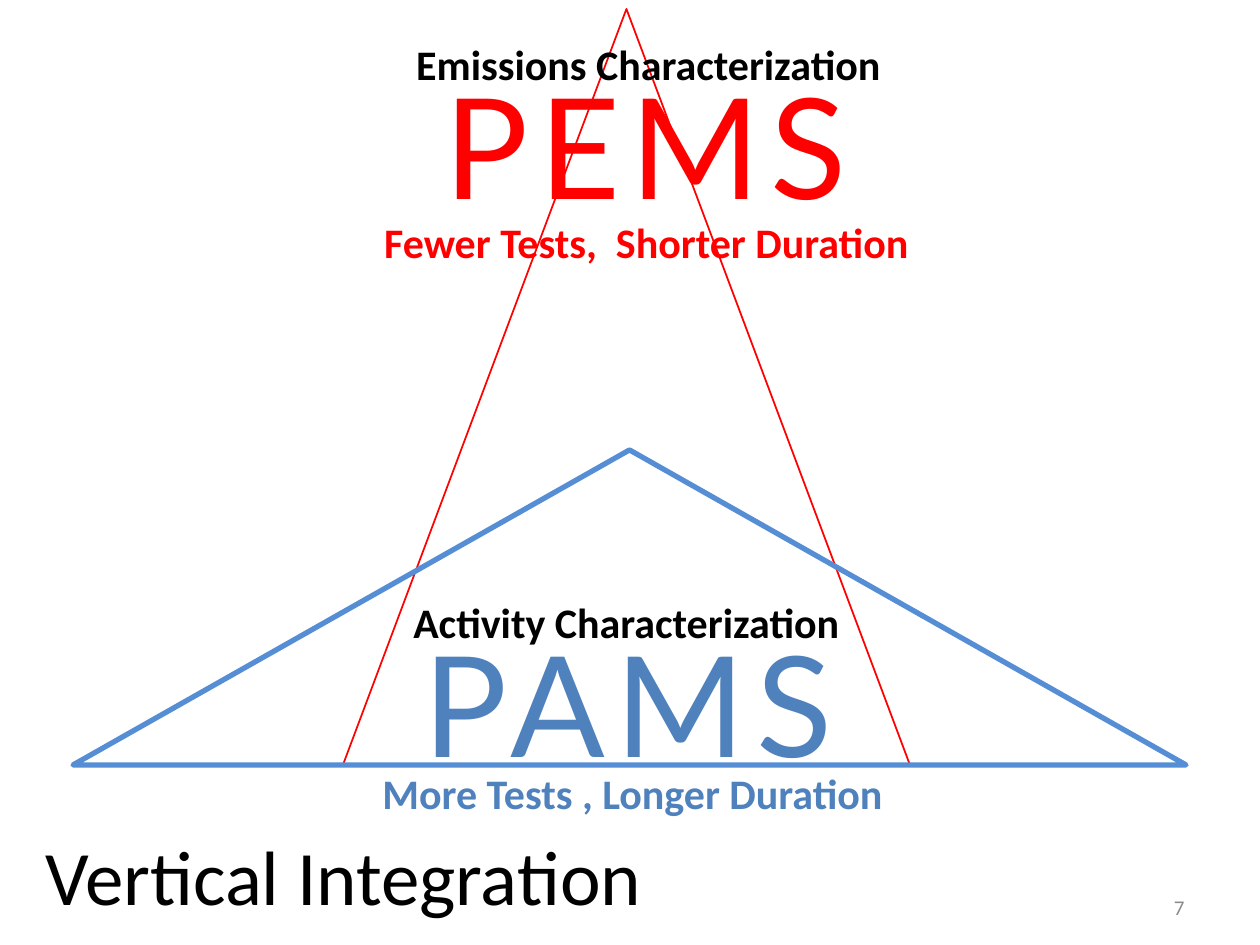
"""Build the Vertical Integration slide comparing PEMS and PAMS testing."""
from dataclasses import dataclass

import pptx
import pptx.dml.color
import pptx.enum.shapes
import pptx.enum.text
import pptx.shapes.autoshape
import pptx.util

RGBColor = pptx.dml.color.RGBColor
Align = pptx.enum.text.PP_ALIGN
Anchor = pptx.enum.text.MSO_ANCHOR

PIXEL = 914400 / 126
RED = RGBColor(0xFF, 0x00, 0x00)
BLUE = RGBColor(0x4F, 0x81, 0xBD)
OUTLINE_BLUE = RGBColor(0x55, 0x8E, 0xD5)
BLACK = RGBColor(0x00, 0x00, 0x00)
GRAY = RGBColor(0x8C, 0x8C, 0x8C)


@dataclass(frozen=True)
class Box:
    left: int
    top: int
    width: int
    height: int

    def emu(self) -> list[pptx.util.Emu]:
        lengths = (self.left, self.top, self.width, self.height)
        return [pptx.util.Emu(round(length * PIXEL)) for length in lengths]


@dataclass(frozen=True)
class Triangle:
    box: Box
    color: RGBColor
    line_width: int


@dataclass(frozen=True)
class Label:
    text: str
    box: Box
    color: RGBColor
    size: int = 24
    font: str = "Calibri"
    bold: bool = False
    spacing: int = 0
    alignment: Align = Align.CENTER
    anchor: Anchor = Anchor.TOP


def caption(text: str, box: Box, color: RGBColor) -> Label:
    return Label(text, box, color, bold=True)


def acronym(text: str, box: Box, color: RGBColor) -> Label:
    return Label(text, box, color, size=80, font="Lato", spacing=6)


TRIANGLES = (
    Triangle(Box(343, 9, 567, 756), RED, 1),
    Triangle(Box(73, 450, 1113, 315), OUTLINE_BLUE, 3),
)
PAGE_NUMBER = Label("7", Box(903, 882, 294, 50), GRAY, size=12,
                    alignment=Align.RIGHT, anchor=Anchor.MIDDLE)
TITLE = Label("Vertical Integration", Box(33, 819, 1186, 111), BLACK, size=44,
              alignment=Align.LEFT, anchor=Anchor.MIDDLE)
METHODS = (
    (
        acronym("PAMS", Box(255, 611, 746, 183), BLUE),
        caption("Activity Characterization", Box(285, 590, 683, 63), BLACK),
        caption("More Tests , Longer Duration", Box(328, 761, 609, 63), BLUE),
    ),
    (
        acronym("PEMS", Box(273, 53, 746, 183), RED),
        caption("Emissions Characterization", Box(307, 32, 683, 63), BLACK),
        caption("Fewer Tests,  Shorter Duration", Box(305, 210, 683, 63), RED),
    ),
)


def draw_triangle(shapes, triangle: Triangle) -> None:
    shape = shapes.add_shape(
        pptx.enum.shapes.MSO_SHAPE.ISOSCELES_TRIANGLE, *triangle.box.emu())
    shape.shadow.inherit = False
    shape.fill.background()
    shape.line.color.rgb = triangle.color
    shape.line.width = pptx.util.Pt(triangle.line_width)


def draw_label(shapes, label: Label) -> None:
    frame = shapes.add_textbox(*label.box.emu()).text_frame
    frame.word_wrap = True
    frame.vertical_anchor = label.anchor
    paragraph = frame.paragraphs[0]
    paragraph.alignment = label.alignment
    paragraph.font.name = label.font
    paragraph.font.size = pptx.util.Pt(label.size)
    paragraph.font.bold = label.bold
    paragraph.font.color.rgb = label.color
    run = paragraph.add_run()
    run.text = label.text
    if label.spacing:
        run._r.get_or_add_rPr().set("spc", str(label.spacing * 100))


def main() -> None:
    presentation = pptx.Presentation()
    presentation.slide_width = pptx.util.Inches(10)
    presentation.slide_height = pptx.util.Inches(7.5)
    slide = presentation.slides.add_slide(presentation.slide_layouts[6])
    for triangle in TRIANGLES:
        draw_triangle(slide.shapes, triangle)
    draw_label(slide.shapes, PAGE_NUMBER)
    for labels in METHODS:
        group = slide.shapes.add_group_shape()
        for label in labels:
            draw_label(group.shapes, label)
    draw_label(slide.shapes, TITLE)
    presentation.save("out.pptx")


if __name__ == "__main__":
    main()
